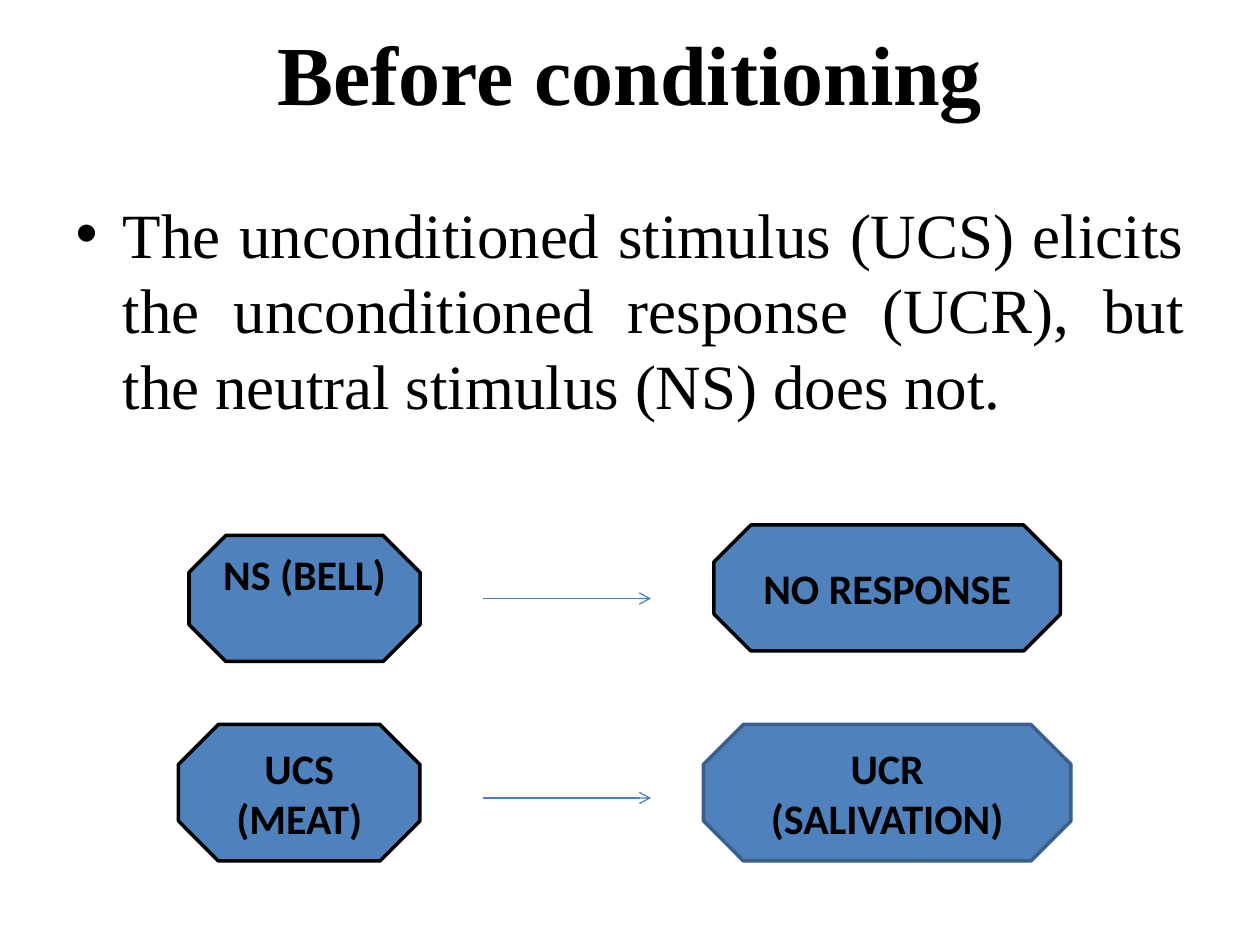
from dataclasses import dataclass

from lxml.etree import SubElement
from pptx import Presentation
from pptx.dml.color import RGBColor
from pptx.enum.shapes import MSO_CONNECTOR, MSO_SHAPE
from pptx.enum.text import MSO_ANCHOR, MSO_AUTO_SIZE, PP_ALIGN
from pptx.oxml.ns import qn
from pptx.util import Pt


@dataclass(frozen=True)
class Theme:
    """Colours, fonts and type sizes of the slide."""

    text: RGBColor = RGBColor(0, 0, 0)
    box_fill: RGBColor = RGBColor(0x4F, 0x81, 0xBD)
    box_line: RGBColor = RGBColor(0, 0, 0)
    response_line: RGBColor = RGBColor(0x3A, 0x5F, 0x8C)
    arrow: RGBColor = RGBColor(0x4B, 0x7E, 0xBC)
    serif: str = "Times New Roman"
    sans: str = "Calibri"
    title_size: int = 48
    body_size: int = 36
    box_size: int = 24


def write_text(frame, text, *, font, size, color, bold=False,
               align=PP_ALIGN.CENTER, anchor=MSO_ANCHOR.MIDDLE):
    """Fill a text frame, one paragraph per line of text."""
    frame.text = text
    frame.word_wrap = True
    frame.auto_size = MSO_AUTO_SIZE.NONE
    frame.vertical_anchor = anchor
    for paragraph in frame.paragraphs:
        paragraph.alignment = align
        paragraph.space_before = Pt(0)
        for run in paragraph.runs:
            run.font.name = font
            run.font.size = Pt(size)
            run.font.bold = bold
            run.font.color.rgb = color


class SlideBuilder:
    """Draws styled elements on the current slide."""

    def __init__(self, slide, theme):
        """Keep the slide and its style."""
        self.slide = slide
        self.theme = theme

    def place(self, shape, left, top, width, height):
        """Set the bounds of a shape in points."""
        shape.left, shape.top = Pt(left), Pt(top)
        shape.width, shape.height = Pt(width), Pt(height)

    def title(self, text, bounds):
        """Write the title in the upper part of its placeholder."""
        shape = self.slide.shapes.title
        self.place(shape, *bounds)
        frame = shape.text_frame
        frame.margin_top, frame.margin_bottom = Pt(0), Pt(51)
        write_text(frame, text, font=self.theme.serif, bold=True,
                   size=self.theme.title_size, color=self.theme.text)

    def body(self, text, bounds):
        """Write the justified bullet list."""
        shape = self.slide.placeholders[1]
        self.place(shape, *bounds)
        write_text(shape.text_frame, text, font=self.theme.serif,
                   size=self.theme.body_size, color=self.theme.text,
                   align=PP_ALIGN.JUSTIFY, anchor=MSO_ANCHOR.TOP)

    def octagon(self, text, bounds, line, bottom_margin=3.6):
        """Draw a labelled octagon."""
        shape = self.slide.shapes.add_shape(
            MSO_SHAPE.OCTAGON, *(Pt(length) for length in bounds))
        shape.shadow.inherit = False
        shape.fill.solid()
        shape.fill.fore_color.rgb = self.theme.box_fill
        shape.line.color.rgb = line
        shape.line.width = Pt(2)
        shape.text_frame.margin_bottom = Pt(bottom_margin)
        write_text(shape.text_frame, text, font=self.theme.sans, bold=True,
                   size=self.theme.box_size, color=self.theme.text)

    def arrow(self, left, right, middle):
        """Draw a horizontal arrow pointing right."""
        connector = self.slide.shapes.add_connector(
            MSO_CONNECTOR.STRAIGHT, Pt(left), Pt(middle), Pt(right), Pt(middle))
        connector.line.color.rgb = self.theme.arrow
        connector.line.width = Pt(0.75)
        SubElement(connector.line._get_or_add_ln(), qn("a:tailEnd"), type="arrow")
        SubElement(connector._element.spPr, qn("a:effectLst"))


def main():
    """Build and save the slide."""
    presentation = Presentation()
    presentation.slide_width, presentation.slide_height = Pt(720), Pt(540)
    slide = presentation.slides.add_slide(presentation.slide_layouts[1])
    theme = Theme()
    builder = SlideBuilder(slide, theme)
    builder.title("Before conditioning", (36, 21.6, 648, 90))
    builder.body("The unconditioned stimulus (UCS) elicits the unconditioned "
                 "response (UCR), but the neutral stimulus (NS) does not.",
                 (36, 108, 648, 400))
    builder.octagon("NS (BELL)", (108, 306, 132, 72), theme.box_line, bottom_margin=32)
    builder.octagon("UCS (MEAT)", (102, 414, 138, 78), theme.box_line)
    builder.octagon("NO RESPONSE", (408, 300, 198, 72), theme.box_line)
    builder.octagon("UCR\n(SALIVATION)", (402, 414, 210, 78), theme.response_line)
    for middle in (342, 456):
        builder.arrow(276, 372, middle)
    presentation.save("out.pptx")


if __name__ == "__main__":
    main()
